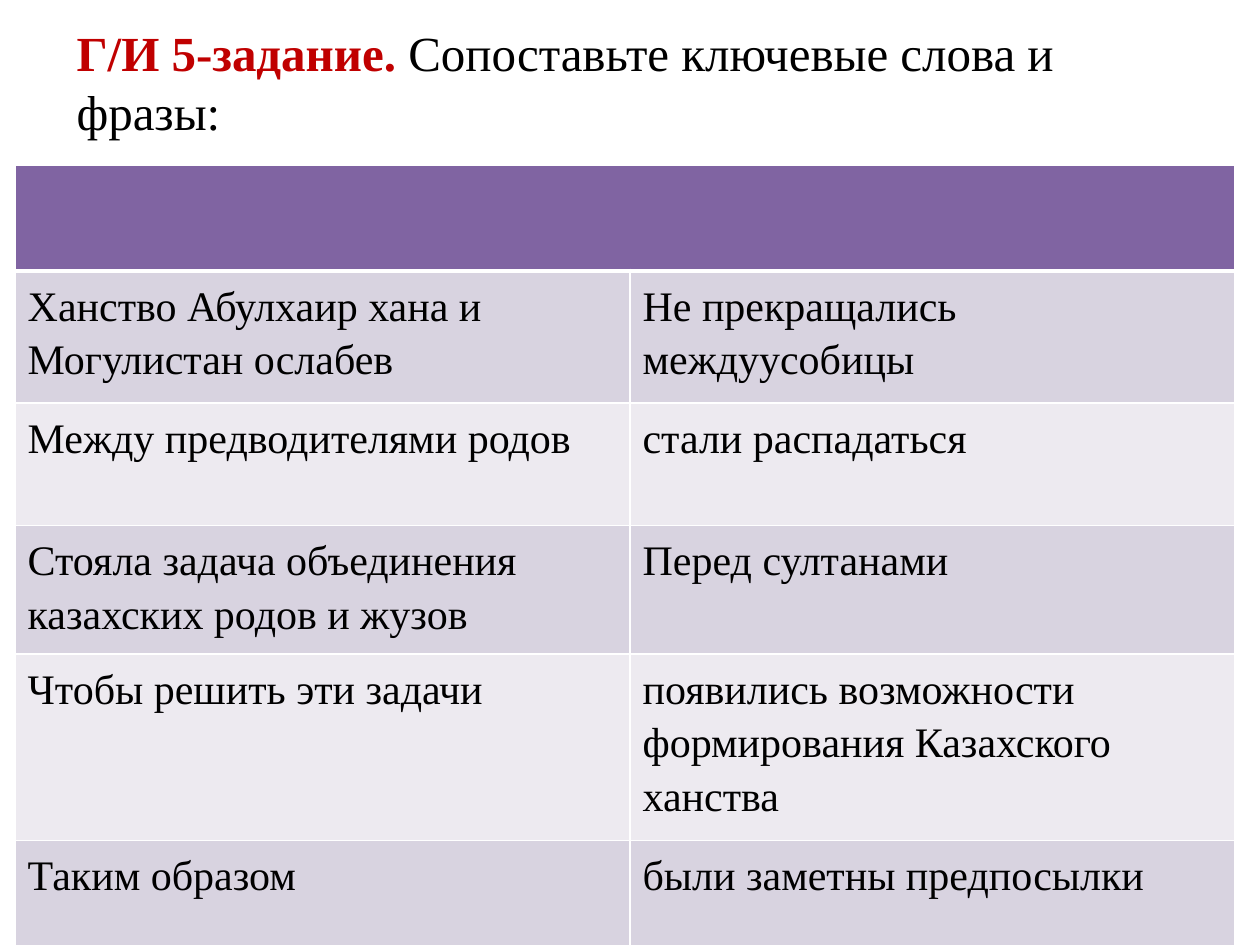
from lxml.etree import SubElement
from pptx import Presentation
from pptx.dml.color import RGBColor
from pptx.oxml.ns import qn
from pptx.util import Inches, Pt

FONT = "Times New Roman"
RED = RGBColor(0xC0, 0x00, 0x00)
BLACK = RGBColor(0x00, 0x00, 0x00)
WHITE = RGBColor(0xFF, 0xFF, 0xFF)
PURPLE = RGBColor(0x80, 0x64, 0xA2)
BANDS = (RGBColor(0xD8, 0xD3, 0xE0), RGBColor(0xED, 0xEA, 0xF0))

COLUMN_WIDTHS = (4.88, 4.8)
ROW_HEIGHTS = (0.84, 1.05, 0.97, 0.97, 1.41, 0.84)
PHRASES = (
    ("Ханство Абулхаир хана и Могулистан ослабев", "Не прекращались междуусобицы"),
    ("Между предводителями родов", "стали распадаться"),
    ("Стояла задача объединения казахских родов и жузов", "Перед султанами"),
    ("Чтобы решить эти задачи", "появились возможности формирования Казахского ханства"),
    ("Таким образом", "были заметны предпосылки"),
)


def format_run(run, size, color, bold=False):
    """Apply the slide font to a run."""
    run.font.name = FONT
    run.font.size = Pt(size)
    run.font.bold = bold
    run.font.color.rgb = color


def add_task(slide):
    """Add the task heading above the table."""
    shape = slide.shapes.add_textbox(Inches(0.51), Inches(0.13), Inches(9), Inches(1.1))
    shape.text_frame.word_wrap = True
    paragraph = shape.text_frame.paragraphs[0]
    parts = (
        ("Г/И 5-задание. ", RED, True),
        ("Сопоставьте ключевые слова и фразы:", BLACK, False),
    )
    for text, color, bold in parts:
        run = paragraph.add_run()
        run.text = text
        format_run(run, 28, color, bold)


def style_cell(cell, color, bottom_width=1):
    """Fill a cell and give it white borders."""
    properties = cell._tc.get_or_add_tcPr()
    for side in ("lnL", "lnR", "lnT", "lnB"):
        width = bottom_width if side == "lnB" else 1
        line = SubElement(properties, qn(f"a:{side}"), w=str(Pt(width)))
        fill = SubElement(line, qn("a:solidFill"))
        SubElement(fill, qn("a:srgbClr"), val=str(WHITE))
    cell.fill.solid()
    cell.fill.fore_color.rgb = color


def write_cell(cell, text):
    """Write one phrase in a cell."""
    cell.text_frame.text = text
    paragraph = cell.text_frame.paragraphs[0]
    paragraph.line_spacing = 1.15
    format_run(paragraph.runs[0], 24, BLACK)


def add_phrase_table(slide):
    """Add the two-column table of phrases to match."""
    table = slide.shapes.add_table(
        len(ROW_HEIGHTS), len(COLUMN_WIDTHS), Inches(0.12), Inches(1.31),
        Inches(sum(COLUMN_WIDTHS)), Inches(sum(ROW_HEIGHTS)),
    ).table
    for column, width in zip(table.columns, COLUMN_WIDTHS):
        column.width = Inches(width)
    for row, height in zip(table.rows, ROW_HEIGHTS):
        row.height = Inches(height)
    for cell in table.rows[0].cells:
        style_cell(cell, PURPLE, bottom_width=3)
    table.cell(0, 0).merge(table.cell(0, 1))
    for index, phrases in enumerate(PHRASES):
        for cell, text in zip(table.rows[index + 1].cells, phrases):
            style_cell(cell, BANDS[index % 2])
            write_cell(cell, text)


def main():
    """Build and save the slide."""
    presentation = Presentation()
    presentation.slide_width = Inches(10)
    presentation.slide_height = Inches(7.5)
    slide = presentation.slides.add_slide(presentation.slide_layouts[6])
    add_task(slide)
    add_phrase_table(slide)
    presentation.save("out.pptx")


if __name__ == "__main__":
    main()
